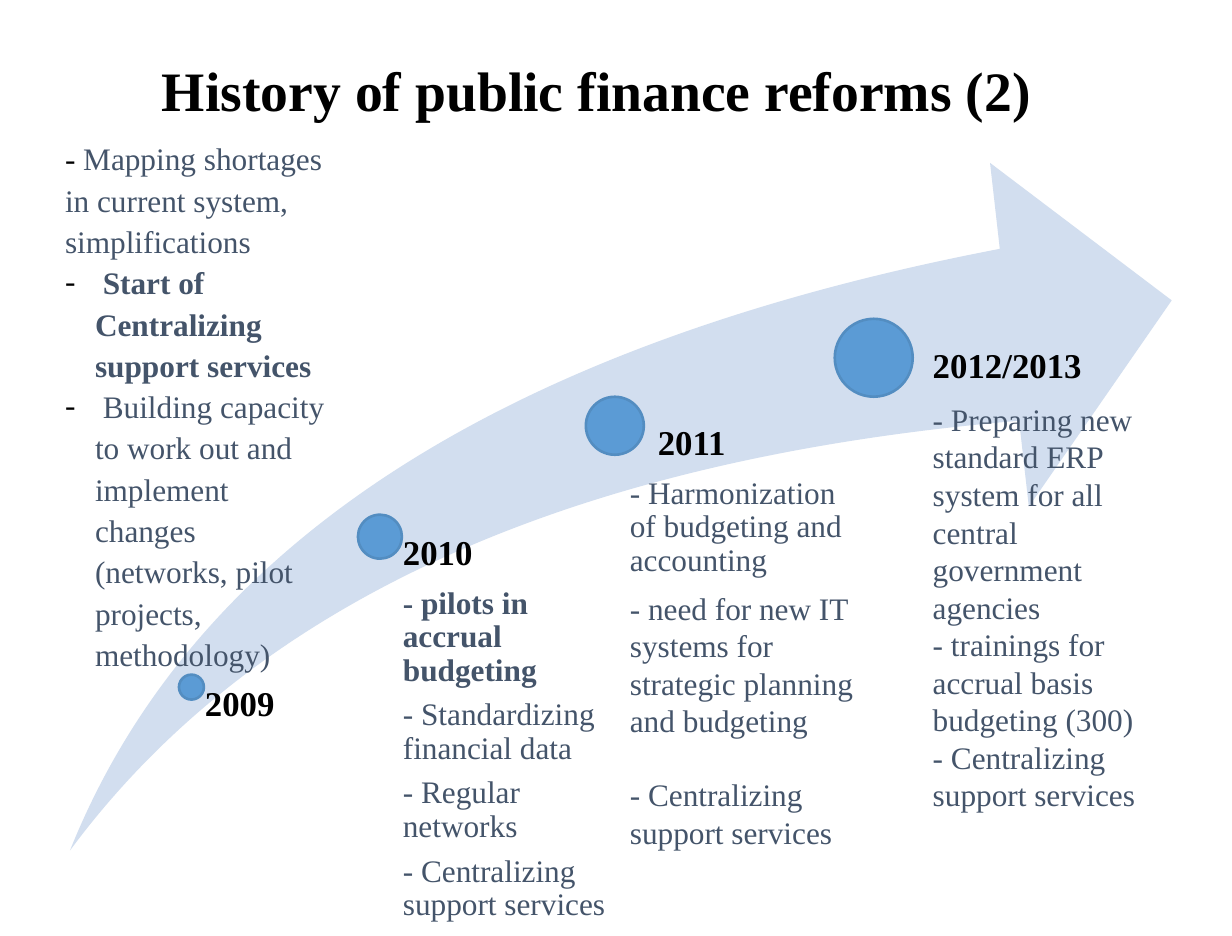
from dataclasses import dataclass

import lxml.etree
import pptx
import pptx.dml.color
import pptx.enum.shapes
import pptx.enum.text
import pptx.oxml.ns
import pptx.shapes.autoshape
import pptx.slide
import pptx.text.text
import pptx.util

EMU_PER_PX = 914400 / 125.2
FONT = "Times New Roman"
BLACK = "000000"
SLATE = "44546A"
ARROW_FILL = "D2DEEF"
DOT_FILL = "5B9BD5"
DOT_LINE = "538DC1"
BULLET_INDENT = 30
ANCHOR = pptx.enum.text.MSO_ANCHOR
SHAPE = pptx.enum.shapes.MSO_SHAPE


@dataclass(frozen=True)
class Box:
    left: int
    top: int
    width: int
    height: int


@dataclass(frozen=True)
class Line:
    text: str
    size: int = 18
    bold: bool = False
    color: str = SLATE
    spacing: float = 1.0
    before: int = 0
    after: int = 0
    indent: int = 0
    bullet: bool = False
    lead: str = ""


@dataclass(frozen=True)
class Milestone:
    dot: Box
    label: Box
    lines: tuple[Line, ...]


def year(text: str, indent: int = 0) -> Line:
    return Line(text, 20, True, BLACK, 0.9, after=8, indent=indent)


def tight(text: str, bold: bool = False) -> Line:
    return Line(text, bold=bold, spacing=0.9, after=6)


MILESTONES = (
    Milestone(Box(179, 675, 25, 25), Box(205, 687, 174, 164), (year("2009"),)),
    Milestone(
        Box(358, 515, 44, 44),
        Box(403, 536, 208, 314),
        (
            year("2010"),
            tight("- pilots in accrual budgeting", bold=True),
            tight("- Standardizing financial data"),
            tight("- Regular networks"),
            tight("- Centralizing support services"),
        ),
    ),
    Milestone(
        Box(586, 397, 58, 58),
        Box(630, 426, 232, 426),
        (
            year("2011", indent=28),
            tight("- Harmonization of budgeting and accounting"),
            Line("- need for new IT systems for strategic planning and budgeting"),
            Line("- Centralizing support services", before=21),
        ),
    ),
    Milestone(
        Box(835, 319, 78, 78),
        Box(933, 349, 242, 493),
        (
            year("2012/2013"),
            Line("- Preparing new standard ERP system for all central government agencies"),
            Line("- trainings for accrual basis budgeting (300)"),
            Line("- Centralizing support services"),
        ),
    ),
)

FIRST_STEPS = (
    Line("Mapping shortages in current system, simplifications", spacing=1.1, lead="- "),
    Line(" Start of Centralizing support services", bold=True, spacing=1.1, bullet=True),
    Line(
        " Building capacity to work out and implement changes "
        "(networks, pilot projects, methodology)",
        spacing=1.1,
        bullet=True,
    ),
)


def px(length: int) -> pptx.util.Emu:
    return pptx.util.Emu(round(length * EMU_PER_PX))


def rgb(color: str) -> pptx.dml.color.RGBColor:
    return pptx.dml.color.RGBColor.from_string(color)


def place(box: Box) -> tuple[pptx.util.Emu, ...]:
    return px(box.left), px(box.top), px(box.width), px(box.height)


def set_indent(paragraph: pptx.text.text._Paragraph, line: Line) -> None:
    properties = paragraph._p.get_or_add_pPr()
    margin = BULLET_INDENT if line.bullet else 0
    properties.set("marL", str(px(margin)))
    properties.set("indent", str(px(line.indent - margin)))
    if line.bullet:
        qn = pptx.oxml.ns.qn
        bullet_color = lxml.etree.SubElement(properties, qn("a:buClr"))
        lxml.etree.SubElement(bullet_color, qn("a:srgbClr"), val=BLACK)
        lxml.etree.SubElement(properties, qn("a:buFont"), typeface=FONT)
        lxml.etree.SubElement(properties, qn("a:buChar"), char="-")


def write_line(paragraph: pptx.text.text._Paragraph, line: Line) -> None:
    set_indent(paragraph, line)
    paragraph.line_spacing = line.spacing
    paragraph.space_before = pptx.util.Pt(line.before)
    paragraph.space_after = pptx.util.Pt(line.after)
    paragraph.font.name = FONT
    paragraph.font.size = pptx.util.Pt(line.size)
    paragraph.font.bold = line.bold
    paragraph.font.color.rgb = rgb(line.color)
    if line.lead:
        lead = paragraph.add_run()
        lead.text = line.lead
        lead.font.color.rgb = rgb(BLACK)
    paragraph.add_run().text = line.text


def add_text(
    slide: pptx.slide.Slide,
    box: Box,
    lines: tuple[Line, ...],
    anchor: pptx.enum.text.MSO_ANCHOR = ANCHOR.TOP,
) -> None:
    frame = slide.shapes.add_textbox(*place(box)).text_frame
    frame.word_wrap = True
    frame.vertical_anchor = anchor
    frame.margin_left = frame.margin_right = frame.margin_top = frame.margin_bottom = 0
    for index, line in enumerate(lines):
        paragraph = frame.add_paragraph() if index else frame.paragraphs[0]
        write_line(paragraph, line)


def add_filled(
    slide: pptx.slide.Slide, kind: pptx.enum.shapes.MSO_SHAPE, box: Box, color: str
) -> pptx.shapes.autoshape.Shape:
    shape = slide.shapes.add_shape(kind, *place(box))
    shape.shadow.inherit = False
    shape.fill.solid()
    shape.fill.fore_color.rgb = rgb(color)
    shape.line.fill.background()
    return shape


def add_milestone(slide: pptx.slide.Slide, milestone: Milestone) -> None:
    dot = add_filled(slide, SHAPE.OVAL, milestone.dot, DOT_FILL)
    dot.line.color.rgb = rgb(DOT_LINE)
    dot.line.width = pptx.util.Pt(1.5)
    add_text(slide, milestone.label, milestone.lines)


def main() -> None:
    presentation = pptx.Presentation()
    presentation.slide_width = pptx.util.Cm(25)
    presentation.slide_height = pptx.util.Cm(19)
    slide = presentation.slides.add_slide(presentation.slide_layouts[6])

    title = Line("History of public finance reforms (2)", 32, True, BLACK, 0.88)
    add_text(slide, Box(162, 38, 1025, 85), (title,), ANCHOR.BOTTOM)
    arrow = add_filled(slide, SHAPE.SWOOSH_ARROW, Box(70, 163, 1102, 688), ARROW_FILL)
    arrow.adjustments[0] = 0.25
    arrow.adjustments[1] = 0.25
    for milestone in MILESTONES:
        add_milestone(slide, milestone)
    add_text(slide, Box(65, 209, 267, 391), FIRST_STEPS, ANCHOR.MIDDLE)

    presentation.save("out.pptx")


if __name__ == "__main__":
    main()
